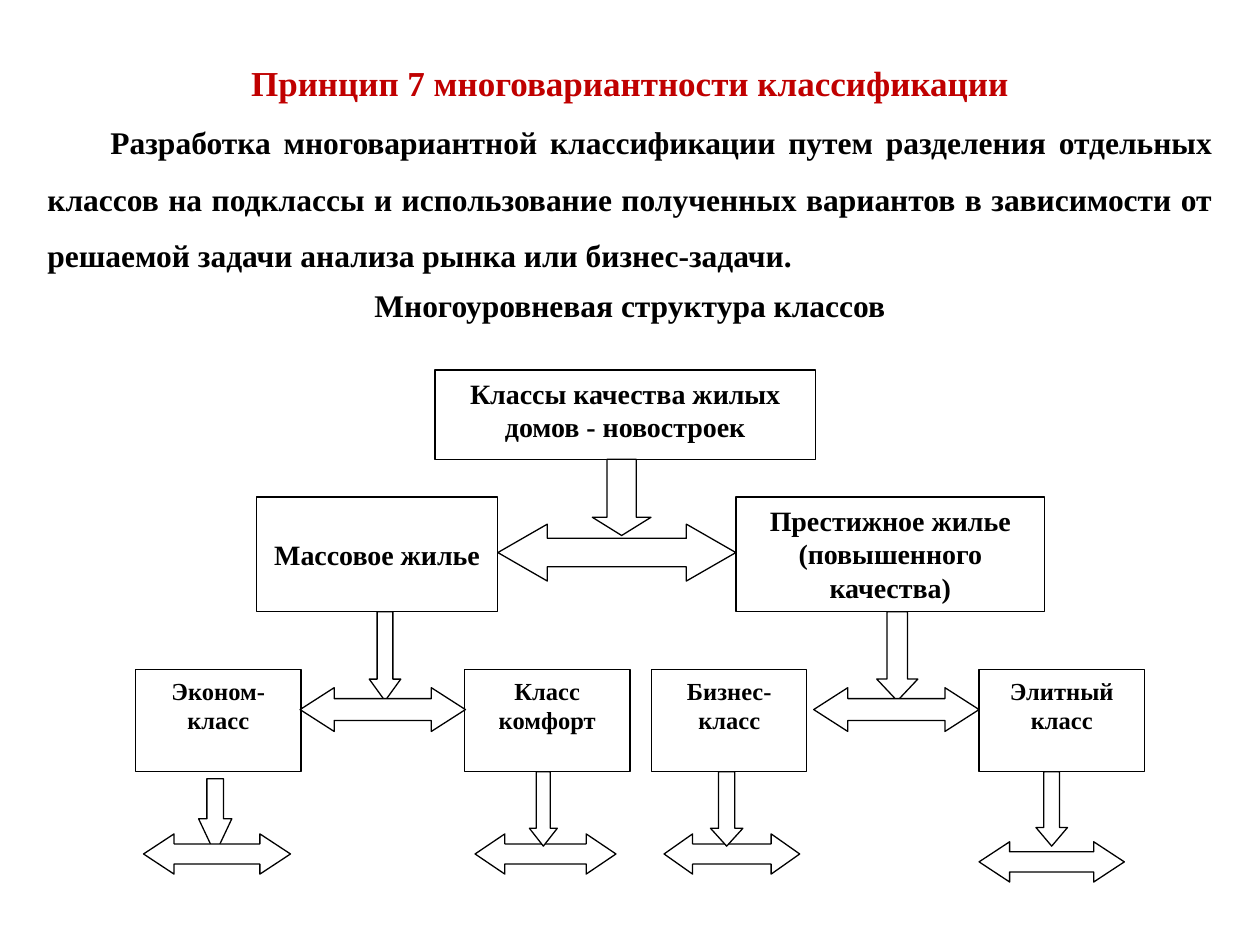
from dataclasses import dataclass

from pptx import Presentation
from pptx.dml.color import RGBColor
from pptx.enum.shapes import MSO_SHAPE
from pptx.enum.text import MSO_ANCHOR, PP_ALIGN
from pptx.util import Pt

FONT = "Times New Roman"
BLACK, WHITE, RED = "000000", "FFFFFF", "C00000"
DOWN, WIDE = MSO_SHAPE.DOWN_ARROW, MSO_SHAPE.LEFT_RIGHT_ARROW


@dataclass
class Box:
    text: str
    x: float
    y: float
    w: float
    h: float
    size: int = 16
    anchor: MSO_ANCHOR = MSO_ANCHOR.TOP


@dataclass
class Arrow:
    kind: MSO_SHAPE
    x: float
    y: float
    w: float
    h: float
    head: float


def color(code: str) -> RGBColor:
    return RGBColor.from_string(code)


def place(item: Box | Arrow) -> tuple:
    return Pt(item.x), Pt(item.y), Pt(item.w), Pt(item.h)


def write(par, text: str, size: int, code: str = BLACK, align=PP_ALIGN.CENTER) -> None:
    par.text = text
    par.alignment = align
    font = par.font
    font.name, font.size, font.bold = FONT, Pt(size), True
    font.color.rgb = color(code)


def add_shape(slide, kind: MSO_SHAPE, item: Box | Arrow):
    shape = slide.shapes.add_shape(kind, *place(item))
    shape.shadow.inherit = False
    shape.fill.solid()
    shape.fill.fore_color.rgb = color(WHITE)
    shape.line.color.rgb = color(BLACK)
    shape.line.width = Pt(0.75)
    return shape


def add_box(slide, box: Box) -> None:
    frame = add_shape(slide, MSO_SHAPE.RECTANGLE, box).text_frame
    frame.word_wrap = True
    frame.vertical_anchor = box.anchor
    write(frame.paragraphs[0], box.text, box.size)


def add_arrow(slide, arrow: Arrow) -> None:
    shape = add_shape(slide, arrow.kind, arrow)
    shape.adjustments[0] = 0.5
    shape.adjustments[1] = arrow.head


def add_frame(slide, x: float, y: float, w: float, h: float, wrap: bool):
    frame = slide.shapes.add_textbox(Pt(x), Pt(y), Pt(w), Pt(h)).text_frame
    frame.word_wrap = wrap
    frame.vertical_anchor = MSO_ANCHOR.MIDDLE
    return frame


CLASSES = [
    ("Эконом-класс", 77.5, 94.5),
    ("Класс комфорт", 265.5, 94.5),
    ("Бизнес-класс", 372.5, 88.5),
    ("Элитный класс", 559.5, 94.5),
]
BOXES = [
    Box("Классы качества жилых домов - новостроек", 248.5, 211.5, 217.5, 51),
    Box("Массовое жилье", 146.5, 284, 138, 65.5, anchor=MSO_ANCHOR.MIDDLE),
    Box("Престижное жилье (повышенного качества)", 420.5, 284, 176.5, 65.5),
    *(Box(text, x, 382.5, w, 58.5, 14) for text, x, w in CLASSES),
]
ARROWS = [
    # Top level
    Arrow(DOWN, 338.5, 262.5, 33.5, 43.5, 0.31),
    Arrow(WIDE, 284.5, 299.5, 136, 32.5, 0.87),
    # Middle level
    Arrow(DOWN, 211, 349.5, 18, 51, 0.69),
    Arrow(WIDE, 171.5, 393, 94.5, 25, 0.78),
    Arrow(DOWN, 501, 349.5, 23.5, 51, 0.53),
    Arrow(WIDE, 465, 393, 94.5, 25, 0.78),
    # Bottom level
    Arrow(DOWN, 113.5, 445, 19, 43, 1.06),
    Arrow(WIDE, 82, 476.5, 84, 23, 0.76),
    Arrow(WIDE, 271.5, 476.5, 80.5, 23, 0.74),
    Arrow(DOWN, 302.5, 441, 16, 42.5, 0.64),
    Arrow(WIDE, 379.5, 476.5, 77.5, 23, 0.71),
    Arrow(DOWN, 406, 441, 18.5, 42.5, 0.55),
    Arrow(DOWN, 592, 441, 18, 42.5, 0.59),
    Arrow(WIDE, 559.5, 481, 83, 23, 0.76),
]


def main() -> None:
    deck = Presentation()
    deck.slide_width, deck.slide_height = Pt(720), Pt(540)
    slide = deck.slides.add_slide(deck.slide_layouts[6])

    # Heading and principle
    frame = add_frame(slide, 20, 19, 680, 142, True)
    head, body = frame.paragraphs[0], frame.add_paragraph()
    write(head, "Принцип 7 многовариантности классификации", 20, RED)
    write(
        body,
        "Разработка многовариантной классификации путем разделения отдельных "
        "классов на подклассы и использование полученных вариантов в зависимости "
        "от решаемой задачи анализа рынка или бизнес-задачи.",
        18,
        align=PP_ALIGN.JUSTIFY,
    )
    head.line_spacing = body.line_spacing = 1.5
    body_props = body._p.get_or_add_pPr()
    body_props.set("marL", "0")
    body_props.set("indent", str(Pt(36)))

    # Class tree
    for box in BOXES:
        add_box(slide, box)
    for arrow in ARROWS:
        add_arrow(slide, arrow)

    # Tree caption
    frame = add_frame(slide, 205, 160, 310, 29, False)
    write(frame.paragraphs[0], "Многоуровневая структура классов", 18)

    deck.save("out.pptx")


if __name__ == "__main__":
    main()
